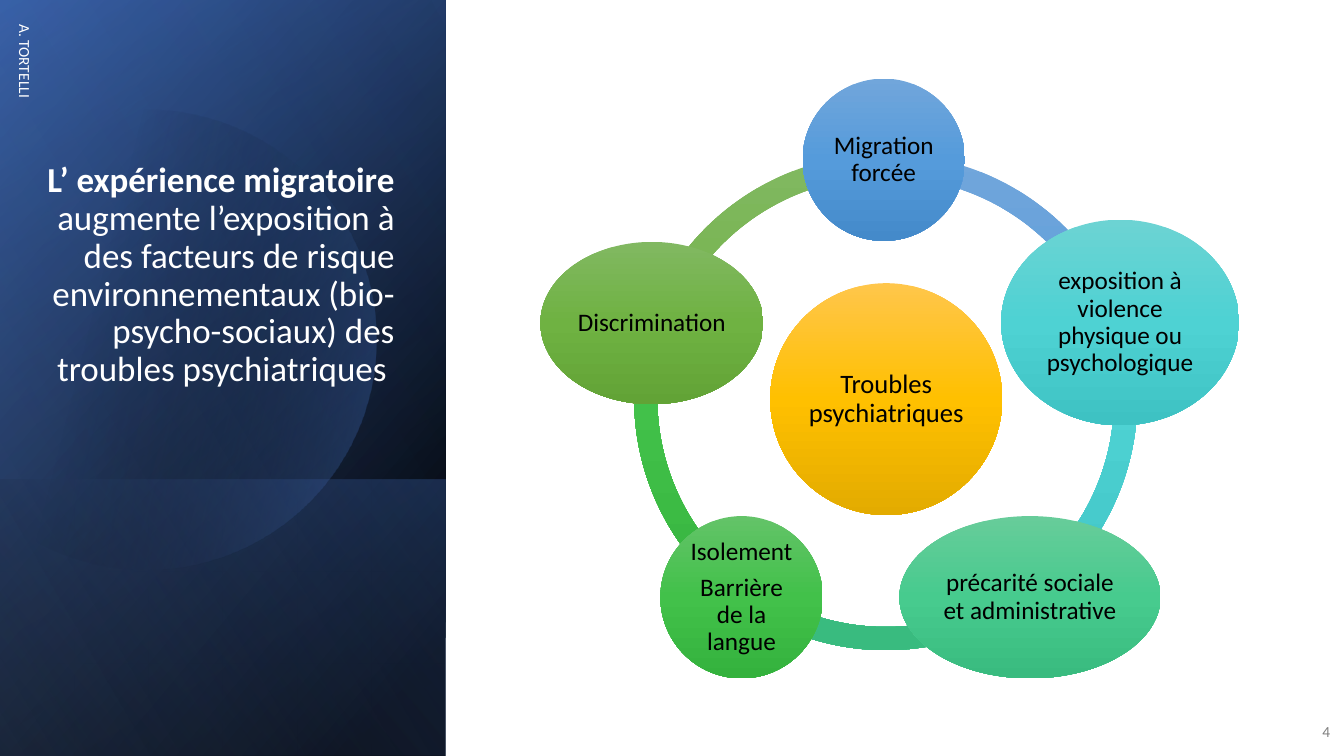
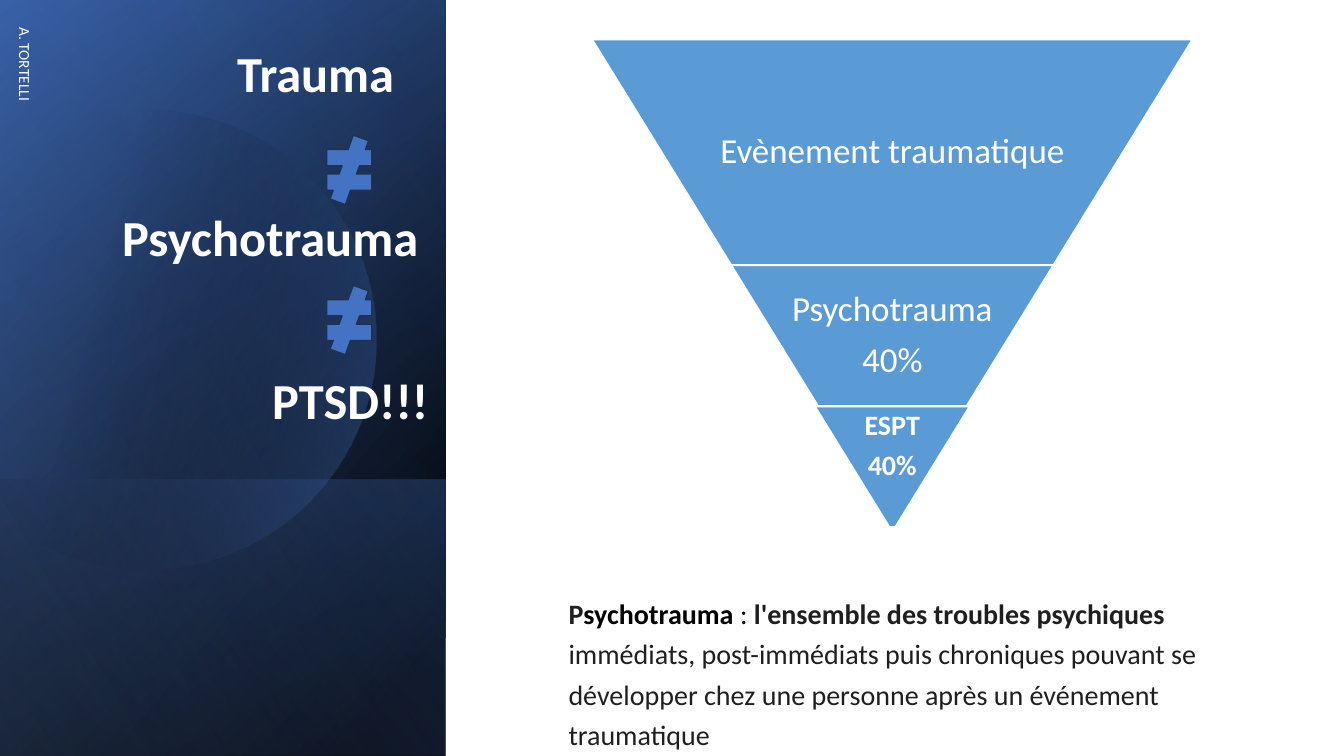
import math

import pptx
import pptx.dml.color
import pptx.enum.shapes
import pptx.enum.text
import pptx.oxml
import pptx.oxml.ns
import pptx.util

Inches = pptx.util.Inches
Pt = pptx.util.Pt
RGB = pptx.dml.color.RGBColor.from_string
MSO = pptx.enum.shapes.MSO_SHAPE
ALIGN = pptx.enum.text.PP_ALIGN
ANCHOR = pptx.enum.text.MSO_ANCHOR
qn = pptx.oxml.ns.qn

T = {
    "font": "Calibri",
    "white": "FFFFFF", "black": "000000", "ink": "1F1F1F", "grey": "808080",
    "navy": "2F5597", "accent": "4472C4", "pale": "8FAADC", "outline": "1E3256",
    "pyramid": "5B9BD5",
    "blue": ("71A6DB", "559BDB", "448ACA"),
    "teal": ("6CD3D3", "4ED2D3", "3EC2C3"),
    "mint": ("67CC9A", "47CB8E", "39BB7F"),
    "green": ("63C368", "42C14A", "34B23D"),
    "olive": ("81B861", "6FB242", "62A336"),
    "amber": ("FFC64B", "FFC000", "E3AB00"),
    "small": 11, "node": 18, "core": 19, "body": 20, "lead": 25, "title": 36,
}


def paint(sp, stops, angle):
    sp.shadow.inherit = False
    sp.line.fill.background()
    sp.fill.background()
    gs = "".join(
        f'<a:gs pos="{pos * 1000}"><a:srgbClr val="{color}">'
        f'<a:alpha val="{alpha * 1000}"/></a:srgbClr></a:gs>'
        for pos, color, alpha in stops)
    grad = pptx.oxml.parse_xml(
        '<a:gradFill xmlns:a="http://schemas.openxmlformats.org/drawingml/2006/main"'
        f' rotWithShape="1"><a:gsLst>{gs}</a:gsLst>'
        f'<a:lin ang="{angle * 60000}" scaled="0"/></a:gradFill>')
    spPr = sp._element.spPr
    spPr.replace(spPr.find(qn("a:noFill")), grad)


def write(sp, paras, size, color, inset=0.03, anchor=ANCHOR.MIDDLE, bold=False, **fmt):
    tf = sp.text_frame
    frame = {"word_wrap": True, "vertical_anchor": anchor}
    frame.update({f"margin_{side}": Inches(inset) for side in ("left", "right", "top", "bottom")})
    for key, value in frame.items():
        setattr(tf, key, value)
    for i, runs in enumerate(paras):
        p = tf.add_paragraph() if i else tf.paragraphs[0]
        for key, value in fmt.items():
            setattr(p, key, value)
        for text, run_bold, run_color in [(runs, bold, color)] if isinstance(runs, str) else runs:
            r = p.add_run()
            r.text = text
            style = {"name": T["font"], "size": Pt(size), "bold": run_bold}
            for key, value in style.items():
                setattr(r.font, key, value)
            r.font.color.rgb = RGB(run_color)


prs = pptx.Presentation()
prs.slide_width, prs.slide_height = Inches(13.33), Inches(7.5)

panels = [
    ((-1.54, 1.54, 7.5, 4.42), [(8, T["black"], 100), (100, T["navy"], 100)], 50),
    ((-1.54, 1.54, 7.5, 4.42), [(0, T["black"], 0), (99, T["accent"], 46)], 30),
    ((0.84, 3.92, 2.74, 4.42), [(2, T["accent"], 29), (100, T["black"], 30)], 130),
    ((-1.54, 1.54, 7.5, 4.42), [(0, T["black"], 0), (99, T["pale"], 11)], 120),
]
disc_x, disc_y, disc_r = 1.45, 3.37, 2.28
disc = [(Inches(max(0, disc_x + disc_r * math.cos(math.radians(a)))),
         Inches(disc_y + disc_r * math.sin(math.radians(a)))) for a in range(0, 360, 3)]

slides = []
for author_top in (2.19, 2.22):
    s = prs.slides.add_slide(prs.slide_layouts[6])
    slides.append(s)
    for i, (box, stops, angle) in enumerate(panels):
        if i == len(panels) - 1:
            fb = s.shapes.build_freeform(*disc[0])
            fb.add_line_segments(disc[1:], close=True)
            paint(fb.convert_to_shape(), [(29, T["black"], 0), (100, T["accent"], 43)], 14)
        sp = s.shapes.add_shape(MSO.RECTANGLE, *map(Inches, box))
        sp.rotation = 90
        sp._element.spPr.find(qn("a:xfrm")).set("flipH", "1")
        paint(sp, stops, angle)
    sp = s.shapes.add_textbox(Inches(-2), Inches(author_top), Inches(4.5), Inches(0.4))
    sp.rotation = 90
    write(sp, ["A. TORTELLI"], T["small"], T["white"], inset=0.1, space_after=Pt(6))

s = slides[0]
sp = s.shapes.add_textbox(Inches(0.22), Inches(0.64), Inches(3.79), Inches(3.32))
write(sp, [[("L’ expérience migratoire ", True, T["white"]),
            ("augmente l’exposition à des facteurs de risque environnementaux "
             "(bio-psycho-sociaux) des troubles psychiatriques ", False, T["white"])]],
      T["lead"], T["white"], inset=0.1, anchor=ANCHOR.BOTTOM,
      alignment=ALIGN.RIGHT, line_spacing=0.9)
sp = s.shapes.add_textbox(Inches(12.8), Inches(7.06), Inches(0.49), Inches(0.4))
write(sp, ["4"], T["small"], T["grey"], inset=0.1, alignment=ALIGN.RIGHT, space_after=Pt(6))

arcs = [
    (6.27, 1.53, 199.7, 269.9, "olive"),
    (6.29, 1.46, 126, 198, "green"),
    (6.29, 1.46, 54, 126, "mint"),
    (6.29, 1.46, 342, 54, "teal"),
    (6.31, 1.53, 268.8, 340.3, "blue"),
]
nodes = [
    (7.64, 2.81, 2.3, 2.3, "amber", "core", ["Troubles psychiatriques"]),
    (7.96, 0.78, 1.61, 1.61, "blue", "node", ["Migration forcée"]),
    (9.93, 2.18, 2.36, 2.04, "teal", "node", ["exposition à violence physique ou psychologique"]),
    (8.92, 5.12, 2.59, 1.61, "mint", "node", ["précarité sociale et administrative"]),
    (6.55, 5.12, 1.61, 1.61, "green", "node", ["Isolement", "Barrière de la langue"]),
    (5.36, 2.4, 2.21, 1.61, "olive", "node", ["Discrimination"]),
]
for x, y, start, end, color in arcs:
    sp = s.shapes.add_shape(MSO.BLOCK_ARC, Inches(x), Inches(y), Inches(4.99), Inches(4.99))
    for i, value in enumerate((start * 0.6, end * 0.6, 0.046)):
        sp.adjustments[i] = value
    paint(sp, [(pos, c, 100) for pos, c in zip((0, 50, 100), T[color])], 90)
for x, y, w, h, color, size, paras in nodes:
    sp = s.shapes.add_shape(MSO.OVAL, Inches(x), Inches(y), Inches(w), Inches(h))
    paint(sp, [(pos, c, 100) for pos, c in zip((0, 50, 100), T[color])], 90)
    write(sp, paras, T[size], T["black"], alignment=ALIGN.CENTER,
          line_spacing=0.9, space_after=Pt(0.35 * T[size]))

s = slides[1]
for i, (text, right) in enumerate([("Trauma", 3.91), ("Psychotrauma", 4.15), ("PTSD!!!", 4.25)]):
    sp = s.shapes.add_textbox(Inches(right - 3.6), Inches(0.46 + 1.62 * i), Inches(3.6), Inches(0.6))
    write(sp, [text], T["title"], T["white"], inset=0, bold=True,
          alignment=ALIGN.RIGHT, line_spacing=0.9)

levels = [
    (5.87, 0.39, 5.96, 2.24, 3.87, 2.24, "lead", False, ["Evènement traumatique"]),
    (7.25, 2.63, 3.2, 1.4, 2.08, 1.4, "lead", False, ["Psychotrauma", "40%"]),
    (8.08, 4.03, 1.54, 1.2, 1.54, 0.8, "body", True, ["ESPT", "40%"]),
]
for x, y, w, h, text_w, text_h, size, bold, paras in levels:
    sp = s.shapes.add_shape(MSO.TRAPEZOID, Inches(x), Inches(y), Inches(w), Inches(h))
    sp.rotation = 180
    sp.adjustments[0] = 0.616
    sp.shadow.inherit = False
    sp.fill.solid()
    sp.fill.fore_color.rgb = RGB(T["pyramid"])
    sp.line.color.rgb = RGB(T["white"])
    sp.line.width = Pt(1.5)
    sp = s.shapes.add_textbox(Inches(x + (w - text_w) / 2), Inches(y), Inches(text_w), Inches(text_h))
    write(sp, paras, T[size], T["white"], bold=bold, alignment=ALIGN.CENTER,
          line_spacing=0.9, space_after=Pt(0.35 * T[size]))

sp = s.shapes.add_textbox(Inches(5.54), Inches(5.75), Inches(6.75), Inches(1.69))
write(sp, [[("P", True, T["ink"]),
            ("sychotrauma ", True, T["black"]),
            (": ", False, T["black"]),
            ("l'ensemble des troubles psychiques ", True, T["ink"]),
            ("immédiats, post-immédiats puis chroniques pouvant se développer "
             "chez une personne après un événement traumatique", False, T["ink"])]],
      T["body"], T["ink"], inset=0.1, anchor=ANCHOR.TOP, line_spacing=1.2)

for y in (1.34, 2.83):
    sp = s.shapes.add_shape(MSO.MATH_NOT_EQUAL, Inches(3.16), Inches(y), Inches(0.61), Inches(0.69))
    sp.shadow.inherit = False
    sp.fill.solid()
    sp.fill.fore_color.rgb = RGB(T["accent"])
    sp.line.color.rgb = RGB(T["outline"])
    sp.line.width = Pt(1)

prs.save("out.pptx")
